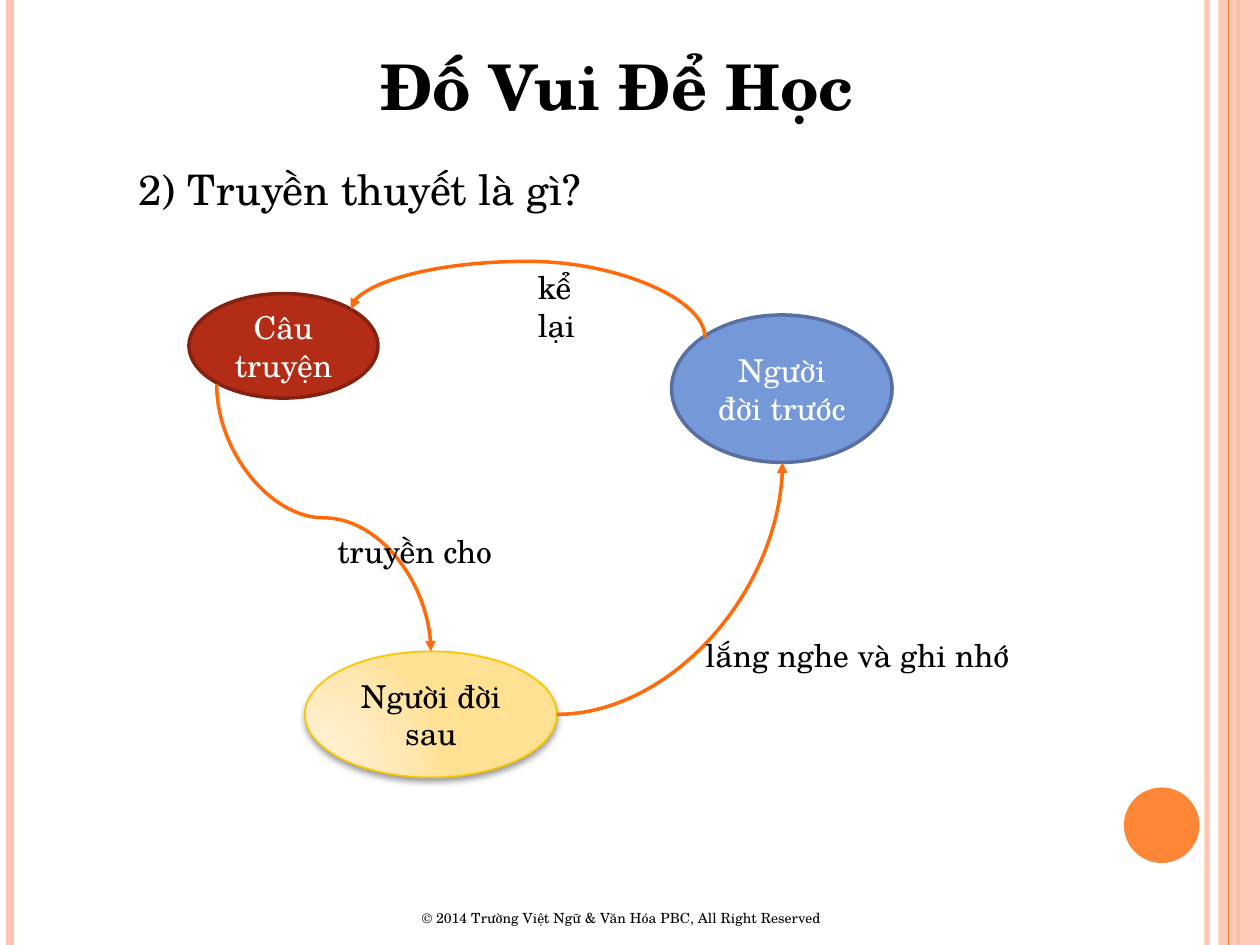
import pptx
import pptx.util
import pptx.dml.color
import pptx.enum.shapes
import pptx.enum.text
import pptx.oxml
import pptx.oxml.ns
from pptx.util import Inches

FONT = "TeX Gyre Schola"
NS = pptx.oxml.ns.nsdecls("a")
SHAPE = pptx.enum.shapes.MSO_SHAPE
LINK = pptx.enum.shapes.MSO_CONNECTOR
qn = pptx.oxml.ns.qn


def rgb(value):
    return pptx.dml.color.RGBColor.from_string(value)


def add_run(tf, text, size, color, bold=False):
    p = tf.paragraphs[0]
    r = p.add_run()
    r.text = text
    r.font.name = FONT
    r.font.size = pptx.util.Pt(size)
    r.font.bold = bold
    r.font.color.rgb = rgb(color)
    return p


prs = pptx.Presentation()
prs.slide_width, prs.slide_height = Inches(10), Inches(7.5)
s = prs.slides.add_slide(prs.slide_layouts[6])

# Border stripes, right band and corner dot
stripes = [(9.58, "FEC3AE", 3, 93), (0.08, "FEC3AE", 4.5, 100),
           (9.83, "FE8637", 1.5, 100), (9.75, "FE8637", 0.75, 100)]
decor = [(SHAPE.RECTANGLE, 9.67, 0, 0.33, 7.5, "FEC3AE", 87),
         (SHAPE.OVAL, 8.92, 6.25, 0.6, 0.6, "FE8637", 100)]


# Stripe 9.75 lies over the band, the others under it
for item in stripes[:3] + decor[:1] + stripes[3:] + decor[1:]:
    if len(item) == 4:
        x, color, width, alpha = item
        sp = s.shapes.add_connector(LINK.STRAIGHT, Inches(x), 0, Inches(x), Inches(7.5))
        sp.line.color.rgb = rgb(color)
        sp.line.width = pptx.util.Pt(width)
        sp._element.spPr.append(pptx.oxml.parse_xml(f"<a:effectLst {NS}/>"))
    else:
        kind, x, y, w, h, color, alpha = item
        sp = s.shapes.add_shape(kind, Inches(x), Inches(y), Inches(w), Inches(h))
        sp.shadow.inherit = False
        sp.fill.solid()
        sp.fill.fore_color.rgb = rgb(color)
        sp.line.fill.background()
    if alpha < 100:
        clr = next(sp._element.spPr.iter(qn("a:srgbClr")))
        clr.append(pptx.oxml.parse_xml(f'<a:alpha {NS} val="{alpha * 1000}"/>'))

# Ovals of the cycle
ovals = [("Câu truyện", 1.5, 2.33, 1.5, 0.83, "B32C16", "842110", 2, "FFFFFF"),
         ("Người đời trước", 5.33, 2.5, 1.75, 1.17, "7598D9", "5770A1", 2, "FFFFFF"),
         ("Người đời sau", 2.42, 5.17, 2, 1, "FFE7B1", "F8C700", 1, "000000")]
for text, x, y, w, h, fill, line, width, color in ovals:
    sp = s.shapes.add_shape(SHAPE.OVAL, Inches(x), Inches(y), Inches(w), Inches(h))
    sp.shadow.inherit = False
    sp.fill.solid()
    sp.fill.fore_color.rgb = rgb(fill)
    sp.line.color.rgb = rgb(line)
    sp.line.width = pptx.util.Pt(width)
    tf = sp.text_frame
    tf.word_wrap = True
    tf.vertical_anchor = pptx.enum.text.MSO_ANCHOR.MIDDLE
    p = add_run(tf, text, 18, color)
    p.alignment = pptx.enum.text.PP_ALIGN.CENTER

# Gradient and soft shadow of the last oval
stops = "".join(f'<a:gs pos="{pos * 1000}"><a:srgbClr val="{c}"/></a:gs>' for pos, c in
                [(0, "FFF0D1"), (30, "FFEFCC"), (75, "FFE7B1"), (100, "FFE193")])
spPr = sp._element.spPr
spPr.replace(spPr.find(qn("a:solidFill")), pptx.oxml.parse_xml(
    f'<a:gradFill {NS}><a:gsLst>{stops}</a:gsLst><a:path path="circle">'
    '<a:fillToRect l="5000" t="100000" r="120000" b="10000"/></a:path></a:gradFill>'))
spPr.find(qn("a:effectLst")).append(pptx.oxml.parse_xml(
    f'<a:outerShdw {NS} blurRad="{pptx.util.Pt(4)}" dist="{pptx.util.Pt(2)}" dir="5400000" '
    'rotWithShape="0"><a:srgbClr val="000000"><a:alpha val="40000"/></a:srgbClr></a:outerShdw>'))

# Curved arrows: unrotated begin and end, rotation, preset, bend
arrows = [(4.08, 3.97, 4.3, 1.16, 270, "curvedConnector3", 2.73),
          (3.63, 3.26, 1.51, 4.96, 270, "curvedConnector3", 0.5),
          (4.42, 5.67, 6.21, 3.67, 0, "curvedConnector2", None)]
for x1, y1, x2, y2, angle, preset, bend in arrows:
    sp = s.shapes.add_connector(LINK.CURVE, Inches(x1), Inches(y1), Inches(x2), Inches(y2))
    sp.line.color.rgb = rgb("FF6B0A")
    sp.line.width = pptx.util.Pt(2)
    spPr = sp._element.spPr
    spPr.find(qn("a:ln")).append(pptx.oxml.parse_xml(f'<a:tailEnd {NS} type="triangle"/>'))
    spPr.append(pptx.oxml.parse_xml(f"<a:effectLst {NS}/>"))
    if angle:
        spPr.find(qn("a:xfrm")).set("rot", str(angle * 60000))
    geom = spPr.find(qn("a:prstGeom"))
    geom.set("prst", preset)
    if bend is not None:
        geom.find(qn("a:avLst")).append(pptx.oxml.parse_xml(
            f'<a:gd {NS} name="adj1" fmla="val {round(bend * 100000)}"/>'))

# Title, question, arrow labels and footer
texts = [("© 2014 Trường Việt Ngữ & Văn Hóa PBC, All Right Reserved", 3.25, 7.17, 3.67, 0.24, 8, True),
         ("Đố Vui Để Học", 2.92, 0.33, 4.08, 0.71, 36, True),
         ("2) Truyền thuyết là gì?", 1, 1.25, 4.75, 0.5, 24, True),
         ("kể lại", 4.17, 2.08, 0.8, 0.4, 18, True),
         ("truyền cho", 2.58, 4.17, 1.43, 0.4, 18, False),
         ("lắng nghe và ghi nhớ", 5.5, 5, 2.62, 0.4, 18, False)]
for text, x, y, w, h, size, wrap in texts:
    tf = s.shapes.add_textbox(Inches(x), Inches(y), Inches(w), Inches(h)).text_frame
    tf.word_wrap = wrap
    tf.auto_size = pptx.enum.text.MSO_AUTO_SIZE.SHAPE_TO_FIT_TEXT
    add_run(tf, text, size, "000000", bold=size == 36)

prs.save("out.pptx")
